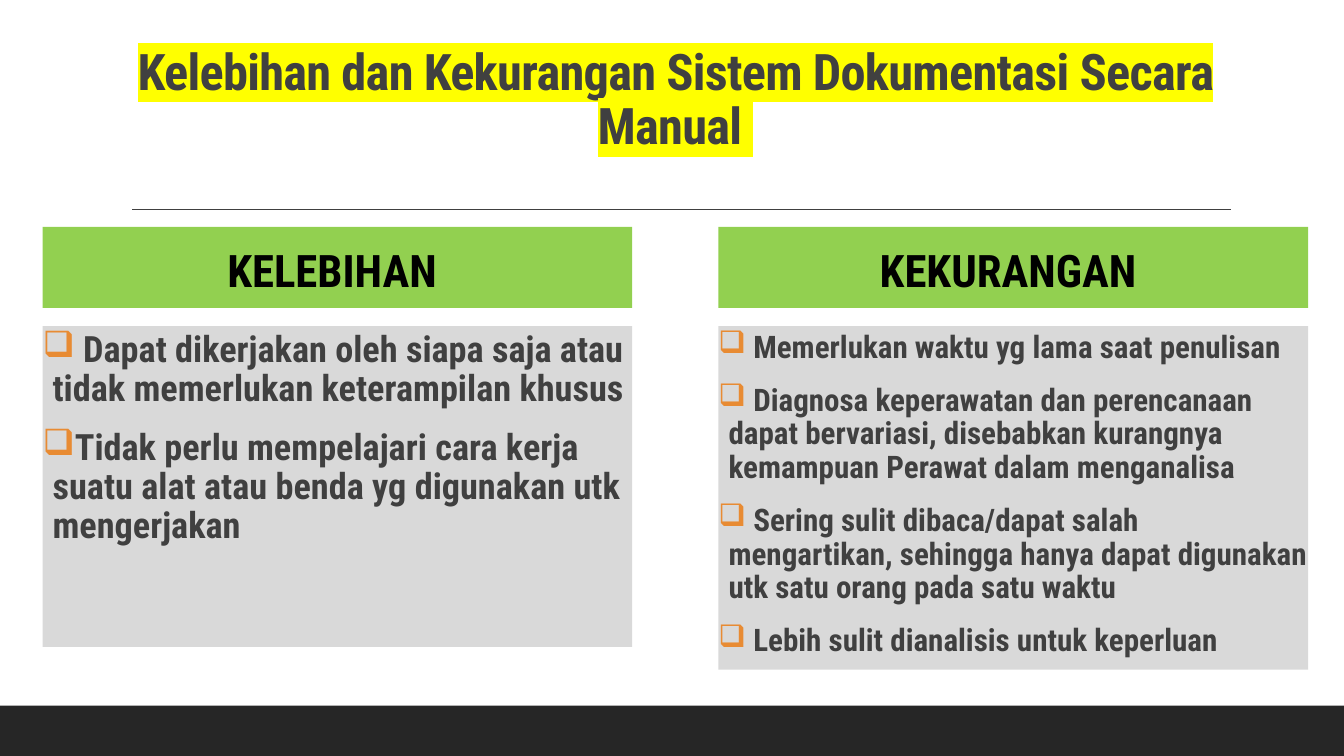
"""Build a slide on the strengths and weaknesses of manual documentation."""
from lxml.etree import SubElement
from pptx import Presentation
from pptx.dml.color import RGBColor
from pptx.enum.shapes import MSO_CONNECTOR, MSO_SHAPE
from pptx.enum.text import MSO_ANCHOR, PP_ALIGN
from pptx.oxml.ns import qn
from pptx.util import Pt


def paint(color_format, value):
    color_format.rgb = RGBColor.from_string(value)


def write(paragraph, text, size, color, bold=True):
    run = paragraph.add_run()
    run.text = text
    run.font.name = "Roboto Condensed"
    run.font.size = Pt(size)
    run.font.bold = bold
    run.font.fill.solid()
    paint(run.font.fill.fore_color, color)
    return run


deck = Presentation()
deck.slide_width, deck.slide_height = Pt(960), Pt(540)
slide = deck.slides.add_slide(deck.slide_layouts[6])

footer = slide.shapes.add_shape(MSO_SHAPE.RECTANGLE, Pt(0), Pt(504), Pt(960), Pt(36))
footer.shadow.inherit = False
footer.fill.solid()
paint(footer.fill.fore_color, "262626")
footer.line.fill.background()

divider = slide.shapes.add_connector(MSO_CONNECTOR.STRAIGHT, Pt(94.5), Pt(149.5), Pt(879), Pt(149.5))
divider.line.width = Pt(1)
paint(divider.line.color, "404040")
SubElement(divider._element.spPr, qn("a:effectLst"))

title = slide.shapes.add_textbox(Pt(86.4), Pt(22.3), Pt(792), Pt(92.2)).text_frame
title.word_wrap = True
title.vertical_anchor = MSO_ANCHOR.BOTTOM
heading = title.paragraphs[0]
heading.alignment = PP_ALIGN.CENTER
heading.line_spacing = 0.9
heading_run = write(heading, "Kelebihan dan Kekurangan Sistem Dokumentasi Secara Manual ", 36, "404040")
heading_props = heading_run.font._element
heading_props.set("spc", "-50")
highlight = SubElement(heading_props, qn("a:highlight"))
SubElement(highlight, qn("a:srgbClr")).set("val", "FFFF00")
heading_props.find(qn("a:solidFill")).addnext(highlight)

columns = [
    (30.4, "KELEBIHAN ", 229, 25.9, [
        [(" ", False), ("Dapat dikerjakan oleh siapa saja atau tidak memerlukan keterampilan khusus", True)],
        [("Tidak perlu mempelajari cara kerja suatu alat atau benda yg digunakan utk mengerjakan", True)],
    ]),
    (513.2, "KEKURANGAN ", 245.4, 22.2, [
        [(" Memerlukan waktu yg lama saat penulisan", True)],
        [(" Diagnosa keperawatan dan perencanaan dapat bervariasi, "
          "disebabkan kurangnya kemampuan Perawat dalam menganalisa", True)],
        [(" Sering sulit dibaca/dapat salah mengartikan, "
          "sehingga hanya dapat digunakan utk satu orang pada satu waktu", True)],
        [(" Lebih sulit dianalisis untuk keperluan", True)],
    ]),
]

for left, label, list_height, list_size, points in columns:
    frames = []
    for top, height, fill in [(162, 58, "92D050"), (233, list_height, "D9D9D9")]:
        panel = slide.shapes.add_textbox(Pt(left), Pt(top), Pt(421.2), Pt(height))
        panel.fill.solid()
        paint(panel.fill.fore_color, fill)
        panel.text_frame.word_wrap = True
        frames.append(panel.text_frame)
    header, body = frames

    header.vertical_anchor = MSO_ANCHOR.MIDDLE
    caption = header.paragraphs[0]
    caption.alignment = PP_ALIGN.CENTER
    caption.line_spacing = 1.1
    caption.space_before, caption.space_after = Pt(12), Pt(2)
    write(caption, label, 32, "000000")

    body.margin_left = body.margin_right = Pt(0)
    for number, pieces in enumerate(points):
        point = body.add_paragraph() if number else body.paragraphs[0]
        point.line_spacing = 0.9
        point.space_before, point.space_after = Pt(12), Pt(2)
        point_props = point._p.get_or_add_pPr()
        point_props.set("marL", str(Pt(7.2)))
        point_props.set("indent", str(-Pt(7.2)))
        bullet_color = SubElement(point_props, qn("a:buClr"))
        SubElement(bullet_color, qn("a:srgbClr")).set("val", "E88B33")
        SubElement(point_props, qn("a:buChar")).set("char", "❑")
        for text, bold in pieces:
            write(point, text, list_size, "404040", bold)

deck.save("out.pptx")
